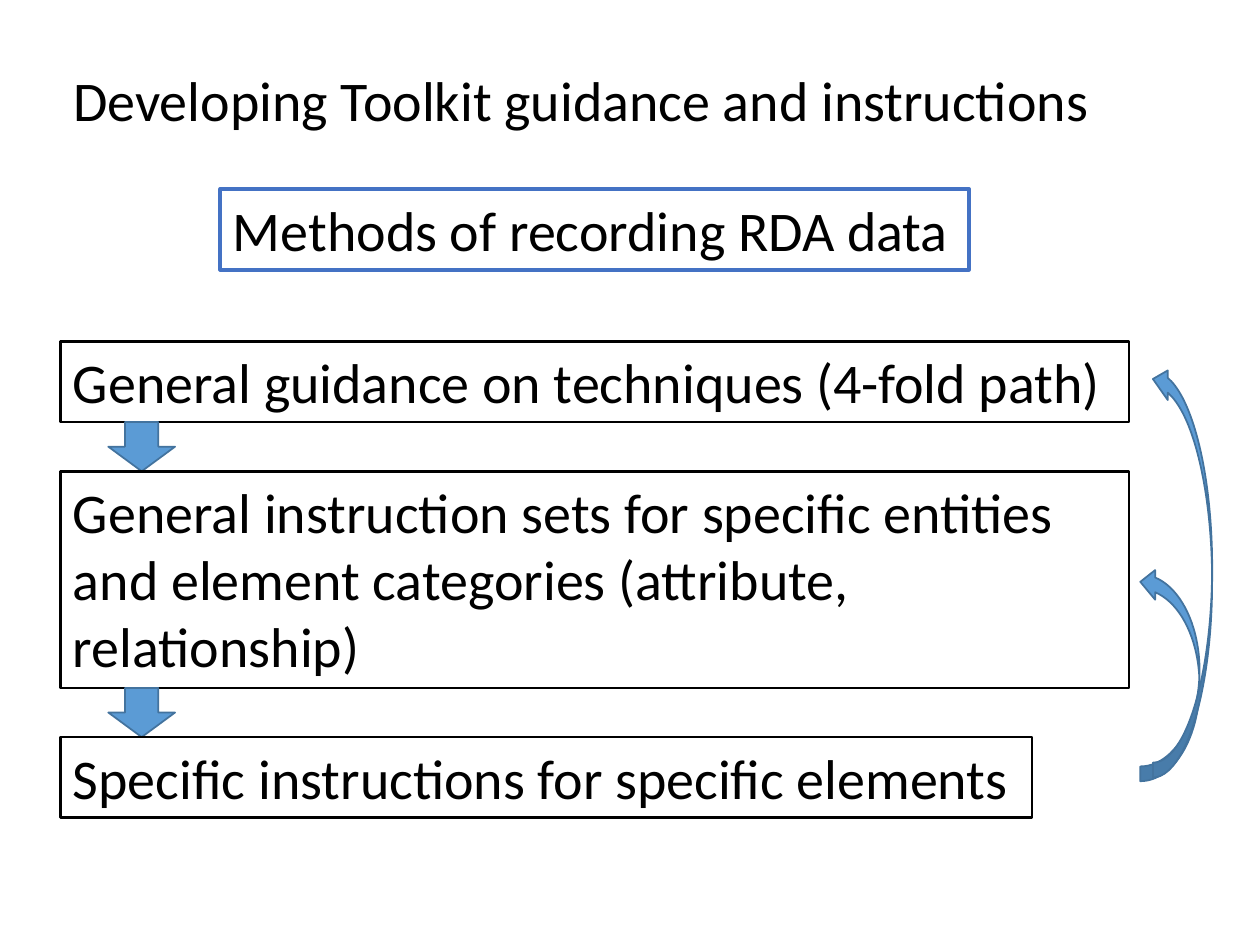
from pptx import Presentation
from pptx.dml.color import RGBColor
from pptx.enum.shapes import MSO_SHAPE
from pptx.enum.text import MSO_ANCHOR, MSO_AUTO_SIZE, PP_ALIGN
from pptx.util import Inches, Pt

DOWN_ARROW = MSO_SHAPE.DOWN_ARROW
CURVED_ARROW = MSO_SHAPE.CURVED_RIGHT_ARROW
TOP = MSO_ANCHOR.TOP
LEFT = PP_ALIGN.LEFT
FIT_SHAPE = MSO_AUTO_SIZE.SHAPE_TO_FIT_TEXT
TITLE_ONLY = 5

BLACK, BLUE = "000000", "4472C4"
ARROW_FILL, ARROW_LINE = "5B9BD5", "43739E"

MARGIN = 0.48
LINE_HEIGHT = 0.64
STEP_GAP = 0.39
STEPS_TOP = 2.71

# Text, width, height, wrapped
STEPS = [
    ("General guidance on techniques (4-fold path)", 8.48, LINE_HEIGHT, True),
    ("General instruction sets for specific entities and element categories "
     "(attribute, relationship)", 8.48, 1.72, True),
    ("Specific instructions for specific elements", 7.71, LINE_HEIGHT, False),
]

# Left, top, height of the arrows leading back up
RETURNS = [(9.05, 4.5, 1.7), (9.15, 2.89, 3.28)]


def color(value):
    return RGBColor.from_string(value)


def set_line(shape, line_color, width):
    shape.line.color.rgb = color(line_color)
    shape.line.width = Pt(width)


def write(shape, text, wrap):
    frame = shape.text_frame
    frame.text = text
    frame.word_wrap = wrap
    frame.auto_size = FIT_SHAPE
    frame.vertical_anchor = TOP
    paragraph = frame.paragraphs[0]
    paragraph.alignment = LEFT
    font = paragraph.runs[0].font
    font.name = "Calibri"
    font.size = Pt(32)
    font.color.rgb = color(BLACK)


def add_title(slide, text):
    title = slide.shapes.title
    title.left, title.top = Inches(MARGIN), Inches(0.47)
    title.width, title.height = Inches(8.36), Inches(LINE_HEIGHT)
    write(title, text, False)


def add_box(slide, text, left, top, width, height, wrap, line_color, line_width):
    box = slide.shapes.add_textbox(
        Inches(left), Inches(top), Inches(width), Inches(height))
    write(box, text, wrap)
    set_line(box, line_color, line_width)


def add_arrow(slide, kind, left, top, width, height, rotation=0):
    arrow = slide.shapes.add_shape(
        kind, Inches(left), Inches(top), Inches(width), Inches(height))
    arrow.rotation = rotation
    arrow.shadow.inherit = False
    arrow.fill.solid()
    arrow.fill.fore_color.rgb = color(ARROW_FILL)
    set_line(arrow, ARROW_LINE, 1)


def main():
    presentation = Presentation()
    presentation.slide_width = Inches(10)
    presentation.slide_height = Inches(7.5)
    slide = presentation.slides.add_slide(presentation.slide_layouts[TITLE_ONLY])

    # Heading and topic
    add_title(slide, "Developing Toolkit guidance and instructions")
    add_box(slide, "Methods of recording RDA data",
            1.75, 1.5, 5.94, LINE_HEIGHT, False, BLUE, 2.25)

    # Steps, from general to specific, joined by down arrows
    top = STEPS_TOP
    for number, (text, width, height, wrap) in enumerate(STEPS):
        if number:
            add_arrow(slide, DOWN_ARROW, 0.86, top - STEP_GAP, 0.53, STEP_GAP)
        add_box(slide, text, MARGIN, top, width, height, wrap, BLACK, 1.5)
        top += height + STEP_GAP

    # Arrows from the specific step back to the general ones
    for left, return_top, height in RETURNS:
        add_arrow(slide, CURVED_ARROW, left, return_top, 0.47, height, rotation=180)

    presentation.save("out.pptx")


if __name__ == "__main__":
    main()
